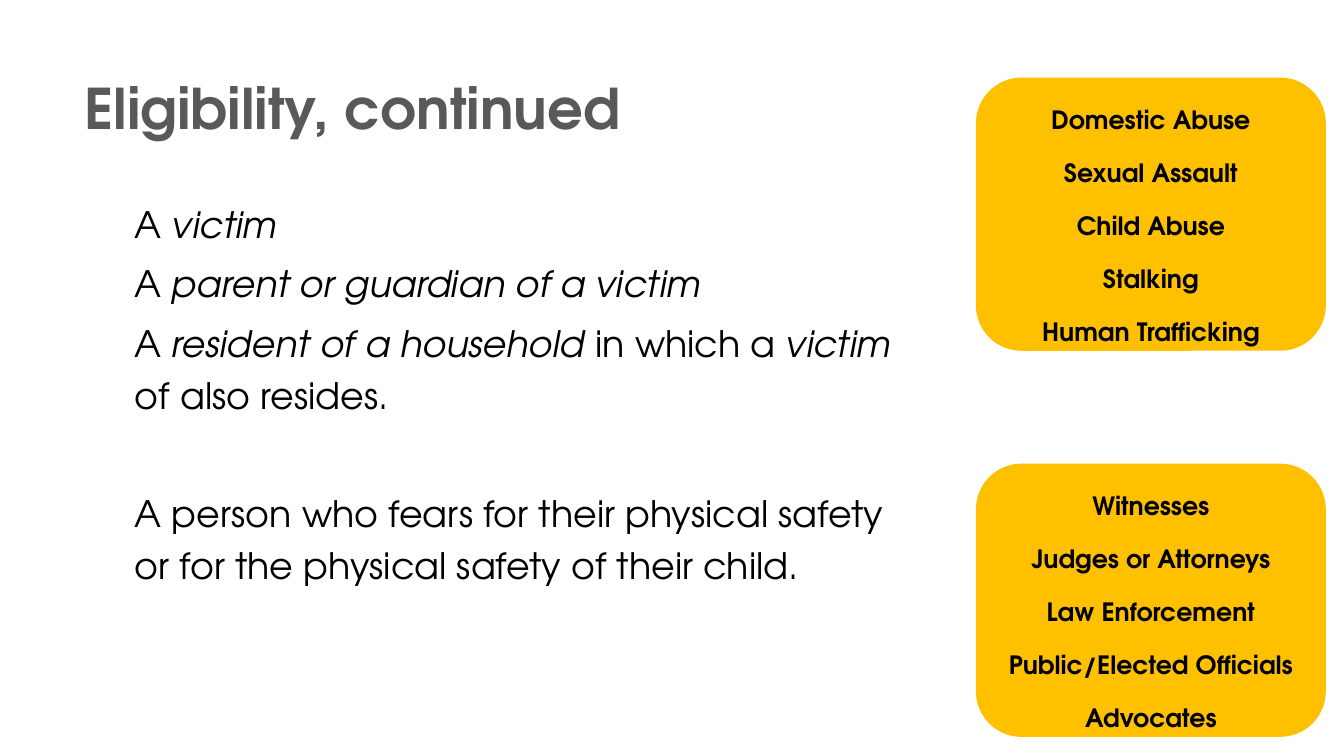
from dataclasses import dataclass

from pptx import Presentation
from pptx.dml.color import RGBColor
from pptx.enum import shapes as sh, text as tx
from pptx.util import Inches, Pt


@dataclass(frozen=True)
class Theme:
    font: str = "TeX Gyre Adventor"
    grey: str = "595959"
    black: str = "000000"
    gold: str = "FFC000"
    title: int = 40
    body: int = 26
    card: int = 18


THEME = Theme()

# Body paragraphs: space before in points, then (text, italic) runs
BODY = [
    (5, [("A ", False), ("victim", True)]),
    (5, [("A ", False), ("parent or guardian of a victim", True)]),
    (5, [("A ", False), ("resident of a household ", True),
         ("in which a ", False), ("victim ", True),
         ("of also resides.", False)]),
    (46.5, [("A person who fears for their physical safety "
             "or for the physical safety of their child.", False)]),
]

# Cards: top edge in inches, then lines
CARDS = [
    (4.6, ["Witnesses", "Judges or Attorneys", "Law Enforcement",
           "Public/Elected Officials", "Advocates"]),
    (0.77, ["Domestic Abuse", "Sexual Assault", "Child Abuse",
            "Stalking", "Human Trafficking"]),
]


def add_run(para, words, size, color, bold=False, italic=False):
    run = para.add_run()
    run.text = words
    font = run.font
    font.name, font.size = THEME.font, Pt(size)
    font.bold, font.italic = bold, italic
    font.color.rgb = RGBColor.from_string(color)


def add_para(frame, first, space):
    para = frame.paragraphs[0] if first else frame.add_paragraph()
    para.line_spacing = space
    return para


def add_box(slide, left, top, width, height, anchor):
    box = slide.shapes.add_textbox(
        Inches(left), Inches(top), Inches(width), Inches(height))
    frame = box.text_frame
    frame.word_wrap = True
    frame.vertical_anchor = anchor
    return frame


def add_title(slide, words):
    frame = add_box(slide, 0.74, 0.67, 9.4, 0.87, tx.MSO_ANCHOR.MIDDLE)
    para = add_para(frame, True, 0.9)
    add_run(para, words, THEME.title, THEME.grey, bold=True)


def add_body(slide, items):
    frame = add_box(slide, 0.74, 1.87, 8.57, 4, tx.MSO_ANCHOR.TOP)
    for i, (gap, runs) in enumerate(items):
        para = add_para(frame, i == 0, 1.2)
        para.space_before = Pt(gap)
        # Left indent of the whole paragraph
        para._p.get_or_add_pPr().set("marL", str(Inches(0.5)))
        for words, slant in runs:
            add_run(para, words, THEME.body, THEME.black, italic=slant)


def add_card(slide, top, lines):
    card = slide.shapes.add_shape(
        sh.MSO_SHAPE.ROUNDED_RECTANGLE,
        Inches(9.68), Inches(top), Inches(3.47), Inches(2.71))
    card.shadow.inherit = False
    card.fill.solid()
    card.fill.fore_color.rgb = RGBColor.from_string(THEME.gold)
    card.line.fill.background()
    frame = card.text_frame
    frame.word_wrap = True
    frame.vertical_anchor = tx.MSO_ANCHOR.MIDDLE
    for i, words in enumerate(lines):
        para = add_para(frame, i == 0, 1.75)
        para.alignment = tx.PP_ALIGN.CENTER
        add_run(para, words, THEME.card, THEME.black, bold=True)


def main():
    deck = Presentation()
    deck.slide_width, deck.slide_height = Inches(13.33), Inches(7.5)
    slide = deck.slides.add_slide(deck.slide_layouts[6])

    # Main text
    add_title(slide, "Eligibility, continued")
    add_body(slide, BODY)

    # Side cards
    for top, lines in CARDS:
        add_card(slide, top, lines)

    deck.save("out.pptx")


if __name__ == "__main__":
    main()
